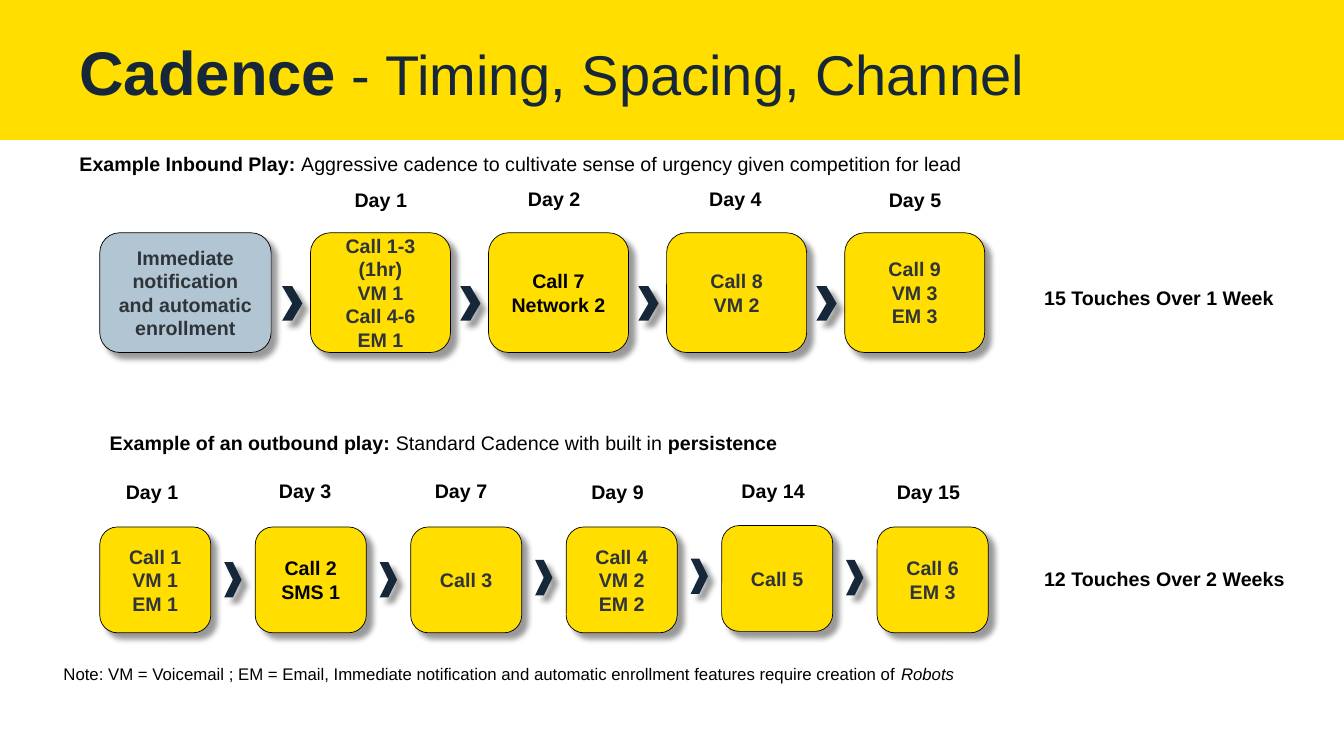
import pptx
import pptx.util
import pptx.dml.color
import pptx.enum.shapes
import pptx.enum.text
import pptx.oxml
from dataclasses import dataclass

Pt = pptx.util.Pt
Shape = pptx.enum.shapes.MSO_SHAPE
Align = pptx.enum.text.PP_ALIGN
Anchor = pptx.enum.text.MSO_ANCHOR


@dataclass(frozen=True)
class Theme:
    font: str = "Arial"
    gold: str = "FFDE00"
    navy: str = "162739"
    steel: str = "B1C5D2"
    slate: str = "2F333A"
    black: str = "000000"
    head: int = 44
    sub: int = 40
    body: int = 14
    note: int = 12


THEME = Theme()

SHADOW = (
    '<a:effectLst xmlns:a="http://schemas.openxmlformats.org/drawingml/2006/main">'
    '<a:outerShdw blurRad="50800" dist="76200" dir="2700000" algn="tl" rotWithShape="0">'
    '<a:srgbClr val="000000"><a:alpha val="40000"/></a:srgbClr>'
    '</a:outerShdw></a:effectLst>'
)


@dataclass(frozen=True)
class Row:
    """Geometry shared by the steps of one play; gap is chevron to box."""
    left: float
    pitch: float
    top: float
    width: float
    height: float
    gap: float
    arrow: tuple


INBOUND = Row(221.8, 127.2, 166.3, 100, 85.5, 20.2, (14.4, 24.5))
OUTBOUND = Row(71.3, 111.05, 376.4, 79.3, 75.6, 22.2, (12.4, 25.2))

# Each step: day, label left, label top, box lines, text colour, box lift, chevron top
INSTEPS = [
    ("Day 1", 246.2, 131, ["Call 1-3 (1hr)", "VM 1", "Call 4-6", "EM 1"],
     THEME.slate, 0, 204.5),
    ("Day 2", 370, 129.8, ["Call 7", "Network 2"], THEME.black, 0, 204.5),
    ("Day 4", 499.5, 129.8, ["Call 8", "VM 2"], THEME.slate, 0, 204.5),
    ("Day 5", 627.8, 131, ["Call 9", "VM 3", "EM 3"], THEME.slate, 0, 204.5),
]
OUTSTEPS = [
    ("Day 1", 82.8, 339.4, ["Call 1", "VM 1", "EM 1"], THEME.slate, 0, None),
    ("Day 3", 192.2, 338.4, ["Call 2", "SMS 1"], THEME.black, 0, 401.5),
    ("Day 7", 303.5, 338.4, ["Call 3"], THEME.slate, 0, 401.5),
    ("Day 9", 415.3, 339.4, ["Call 4", "VM 2", "EM 2"], THEME.slate, 0, 400),
    ("Day 14", 522.5, 338.4, ["Call 5"], THEME.slate, 1, 399),
    ("Day 15", 633.5, 339.4, ["Call 6", "EM 3"], THEME.slate, 0, 400),
]


def color(code):
    return pptx.dml.color.RGBColor.from_string(code)


def style(font, size, code, bold=None):
    font.name = THEME.font
    font.size = Pt(size)
    font.color.rgb = color(code)
    font.bold = bold


def block(shapes, kind, left, top, width, height, fill):
    shape = shapes.add_shape(kind, Pt(left), Pt(top), Pt(width), Pt(height))
    shape.shadow.inherit = False
    shape.fill.solid()
    shape.fill.fore_color.rgb = color(fill)
    shape.line.fill.background()
    return shape


def shade(shape):
    """Replace the empty effect list with a soft drop shadow."""
    props = shape._element.spPr
    for child in list(props):
        if child.tag.endswith("}effectLst"):
            props.replace(child, pptx.oxml.parse_xml(SHADOW))


def card(shapes, left, top, width, height, lines, fill, code):
    shape = block(shapes, Shape.ROUNDED_RECTANGLE, left, top, width, height, fill)
    shape.line.fill.solid()
    shape.line.fill.fore_color.rgb = color(THEME.black)
    shape.line.width = Pt(0.5)
    shade(shape)
    frame = shape.text_frame
    frame.word_wrap = True
    frame.vertical_anchor = Anchor.MIDDLE
    frame.text = "\n".join(lines)
    for para in frame.paragraphs:
        para.alignment = Align.CENTER
        style(para.font, THEME.body, code, True)


def label(shapes, left, top, width, height, runs, size=THEME.body,
          code=THEME.black, space=None):
    """Add one line of text; runs are (text, bold) pairs."""
    box = shapes.add_textbox(Pt(left), Pt(top), Pt(width), Pt(height))
    frame = box.text_frame
    frame.word_wrap = True
    para = frame.paragraphs[0]
    para.line_spacing = space
    same = len({bold for _, bold in runs}) == 1
    style(para.font, size, code, runs[0][1] if same else None)
    for text, bold in runs:
        run = para.add_run()
        run.text = text
        if not same:
            run.font.bold = bold
    return box


def play(group, row, steps):
    """Draw the day labels, cards and chevrons of one play."""
    for i, (day, x, y, lines, code, lift, arrow) in enumerate(steps):
        left = row.left + i * row.pitch
        card(group, left, row.top - lift, row.width, row.height,
             lines, THEME.gold, code)
        label(group, x, y, 68, 24.2, [(day, True)])
        if arrow is not None:
            mark = block(group, Shape.CHEVRON, left - row.gap, arrow,
                         *row.arrow, THEME.navy)
            shade(mark)


def title(shapes):
    block(shapes, Shape.RECTANGLE, 0, 0, 960, 100, THEME.gold)
    box = label(shapes, 49.7, 23, 752.4, 62,
                [("Cadence", True), (" - Timing, Spacing, Channel", False)],
                THEME.sub, THEME.navy, 0.9)
    box.text_frame.vertical_anchor = Anchor.MIDDLE
    box.text_frame.paragraphs[0].runs[0].font.size = Pt(THEME.head)


def main():
    deck = pptx.Presentation()
    deck.slide_width, deck.slide_height = Pt(960), Pt(540)
    shapes = deck.slides.add_slide(deck.slide_layouts[6]).shapes

    title(shapes)
    label(shapes, 49.7, 105.3, 898, 24.2, [
        ("Example Inbound Play: ", True),
        ("Aggressive cadence to cultivate sense of urgency "
         "given competition for lead", False)])
    group = shapes.add_group_shape().shapes
    card(group, 71.3, INBOUND.top, 122.4, INBOUND.height,
         ["Immediate notification and automatic enrollment"],
         THEME.steel, THEME.slate)
    play(group, INBOUND, INSTEPS)
    label(shapes, 738.7, 192.2, 190, 29.5,
          [("15 Touches Over 1 Week", True)], space=1.5)

    label(shapes, 71.3, 304.6, 855, 24.2, [
        ("Example of an outbound play: ", True),
        ("Standard Cadence with built in ", False),
        ("persistence", True)])
    play(shapes.add_group_shape().shapes, OUTBOUND, OUTSTEPS)
    label(shapes, 738.7, 393.3, 200, 29.5,
          [("12 Touches Over 2 Weeks", True)], space=1.5)

    note = label(shapes, 38.2, 463.7, 792.7, 26.6, [
        ("Note: VM = Voicemail ; EM = Email, Immediate notification and "
         "automatic enrollment features require creation of ", False),
        ("Robots", False)], THEME.note, space=1.5)
    note.text_frame.paragraphs[0].runs[1].font.italic = True

    deck.save("out.pptx")


if __name__ == "__main__":
    main()
